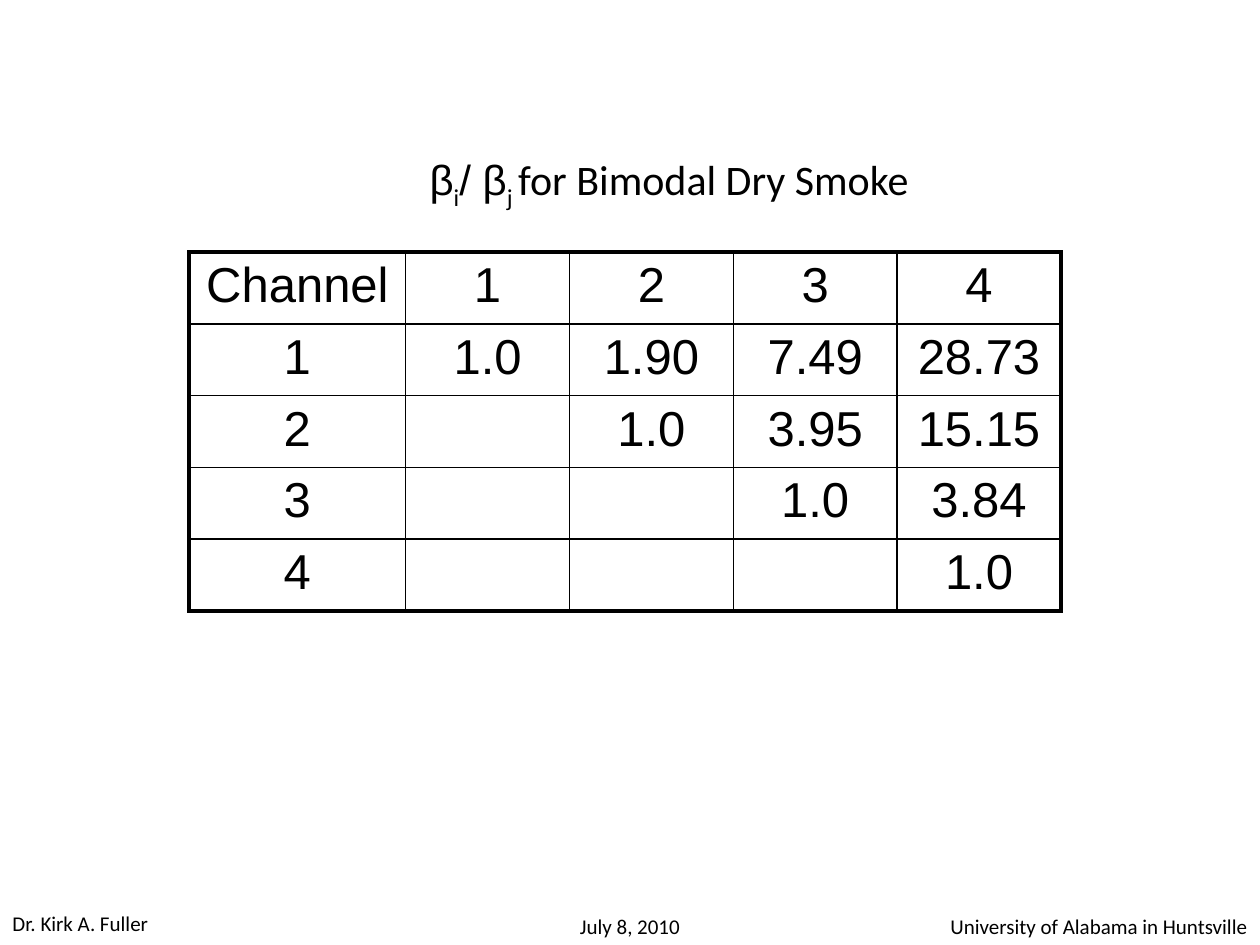
from pptx import Presentation
from pptx.dml.color import RGBColor as Rgb
from pptx.enum.text import MSO_AUTO_SIZE as Fit, PP_ALIGN as Align
from pptx.oxml.ns import qn
from pptx.util import Inches, Pt
from lxml.etree import SubElement as Sub

COLORS = {"ink": "000000", "paper": "FFFFFF"}
THICK, THIN = 2.25, 1


class Deck:
    """Holds the style and the slide being drawn."""

    sans, body = "Arial", "Calibri"

    def __init__(self, wide, high):
        self.prs = Presentation()
        self.prs.slide_width, self.prs.slide_height = Inches(wide), Inches(high)
        self.slide = self.prs.slides.add_slide(self.prs.slide_layouts[6])

    def run(self, para, text, size, face, base=0):
        """Add a run; base is the baseline shift in percent."""
        run = para.add_run()
        run.text = text
        font = run.font
        font.size, font.name = Pt(size), face
        font.color.rgb = Rgb.from_string(COLORS["ink"])
        if base:
            run._r.get_or_add_rPr().set("baseline", str(base * 1000))

    def text(self, box, runs, size, align, wrap=False):
        """Add a text box; runs are tuples of text, face and optional shift."""
        frame = self.slide.shapes.add_textbox(*map(Inches, box)).text_frame
        frame.word_wrap = wrap
        frame.auto_size = Fit.SHAPE_TO_FIT_TEXT
        para = frame.paragraphs[0]
        para.alignment = align
        for text, *style in runs:
            self.run(para, text, size, *style)

    def border(self, cell, widths):
        """Draw the left, right, top and bottom lines of a cell."""
        props = cell._tc.get_or_add_tcPr()
        for i, (side, width) in enumerate(zip("LRTB", widths)):
            line = props.makeelement(qn(f"a:ln{side}"), {"w": str(Pt(width))})
            fill = Sub(line, qn("a:solidFill"))
            Sub(fill, qn("a:srgbClr"), val=COLORS["ink"])
            props.insert(i, line)

    def table(self, left, top, cols, high, rows, size):
        """Add a ruled table with a thick outer frame."""
        count = len(rows)
        box = map(Inches, (left, top, sum(cols), high * count))
        grid = self.slide.shapes.add_table(count, len(cols), *box).table
        grid.first_row = grid.horz_banding = False
        for col, wide in zip(grid.columns, cols):
            col.width = Inches(wide)
        for r, row in enumerate(rows):
            grid.rows[r].height = Inches(high)
            for c, text in enumerate(row):
                cell = grid.cell(r, c)
                cell.fill.solid()
                cell.fill.fore_color.rgb = Rgb.from_string(COLORS["paper"])
                edges = (c == 0, c == len(cols) - 1, r == 0, r == count - 1)
                self.border(cell, [THICK if edge else THIN for edge in edges])
                para = cell.text_frame.paragraphs[0]
                para.alignment = Align.CENTER
                if text:
                    self.run(para, text, size, self.sans)


def main():
    deck = Deck(10, 7.5)
    rows = [
        ["Channel", "1", "2", "3", "4"],
        ["1", "1.0", "1.90", "7.49", "28.73"],
        ["2", "", "1.0", "3.95", "15.15"],
        ["3", "", "", "1.0", "3.84"],
        ["4", "", "", "", "1.0"],
    ]
    deck.table(1.5, 2, [1.72] + [1.3] * 4, 0.57, rows, 28)

    title = [
        ("β", deck.sans),
        ("i", deck.body, -25),
        ("/ β", deck.sans),
        ("j ", deck.body, -25),
        ("for Bimodal Dry Smoke", deck.body),
    ]
    deck.text((2.42, 1.17, 4.89, 0.5), title, 24, Align.RIGHT, wrap=True)

    feet = [
        (0, 7.18, 1.42, "Dr. Kirk A. Fuller", Align.LEFT),
        (7.24, 7.2, 2.76, "University of Alabama in Huntsville", Align.RIGHT),
        (4.45, 7.2, 1.1, "July 8, 2010", Align.CENTER),
    ]
    for left, top, wide, text, align in feet:
        deck.text((left, top, wide, 0.3), [(text, deck.body)], 12, align)

    deck.prs.save("out.pptx")


if __name__ == "__main__":
    main()
